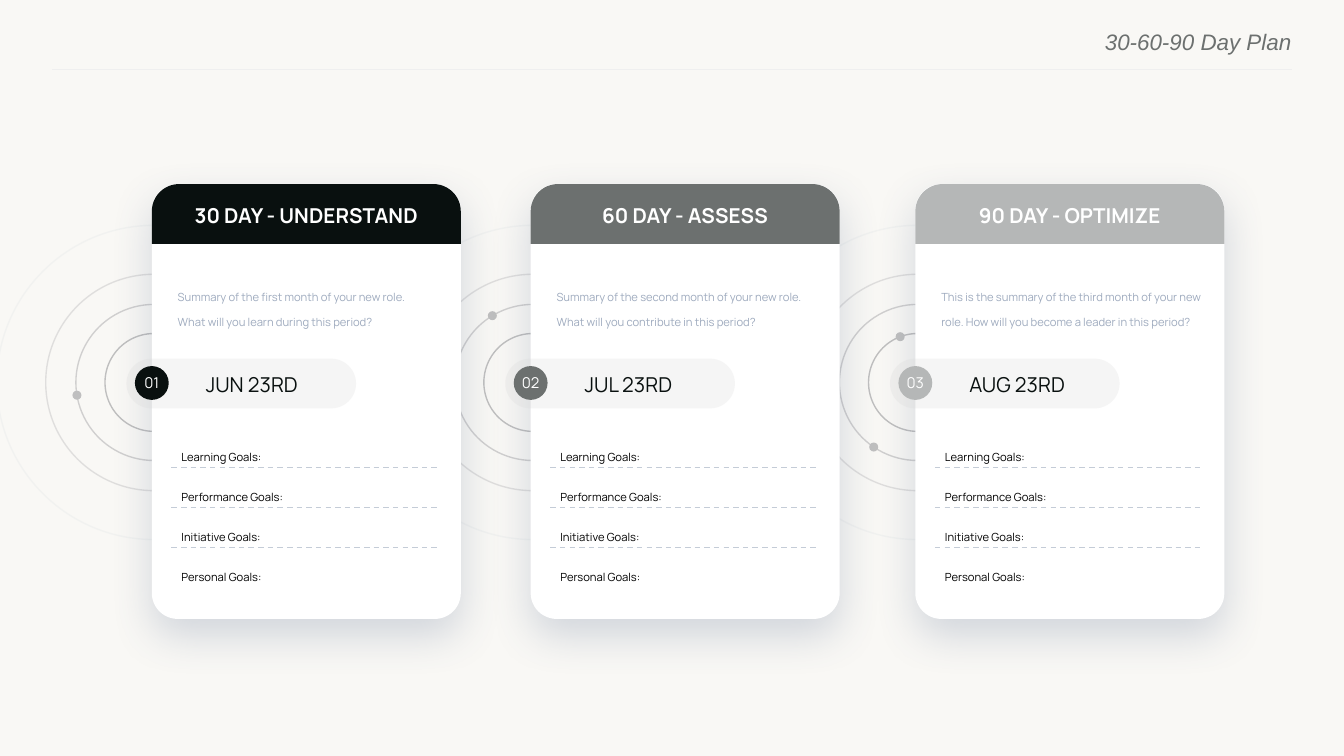
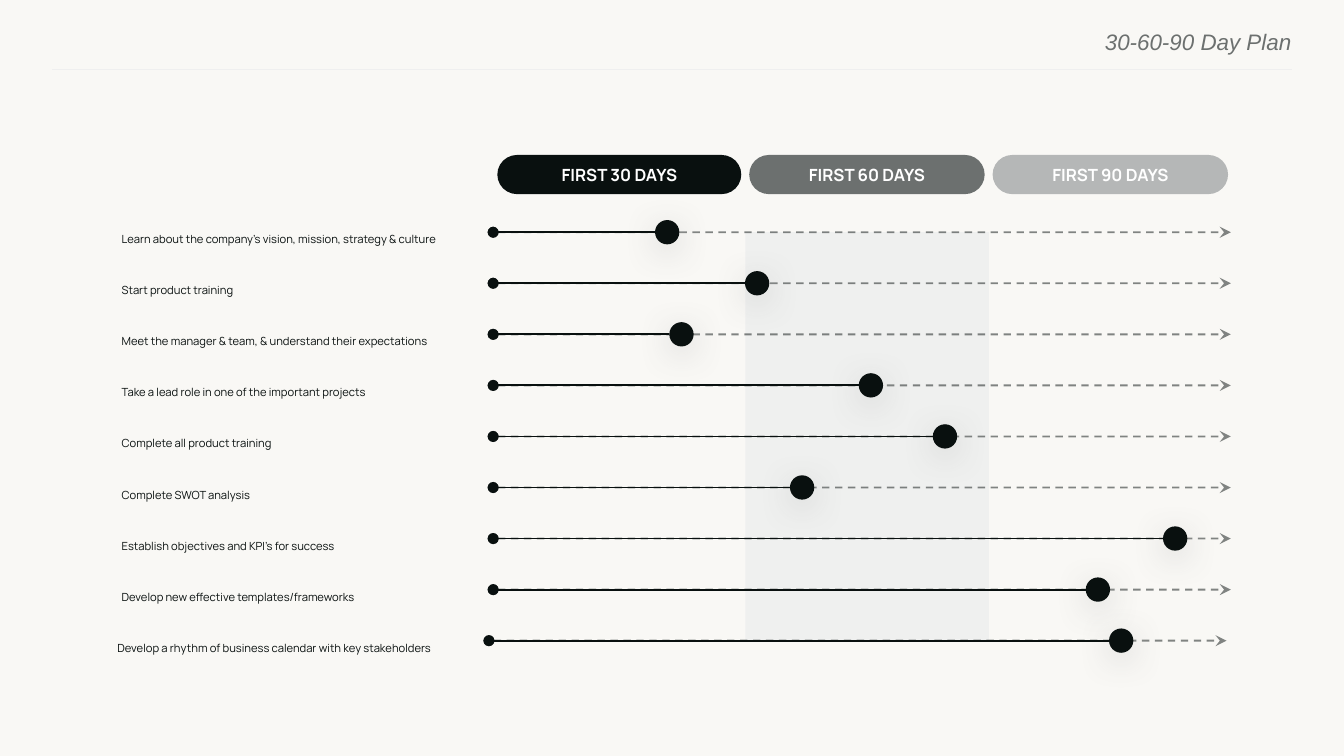
import math

from lxml import etree
from pptx import Presentation
from pptx.dml.color import RGBColor
from pptx.enum import dml, shapes, text
from pptx.oxml.ns import qn
from pptx.util import Cm, Pt

# Colours and fonts
PAPER = RGBColor(0xF9, 0xF8, 0xF5)
RULE = RGBColor(0xEF, 0xEF, 0xEF)
WHITE = RGBColor(0xFF, 0xFF, 0xFF)
BLACK = RGBColor(0x00, 0x00, 0x00)
INK = RGBColor(0x09, 0x10, 0x0F)
SLATE = RGBColor(0x6C, 0x70, 0x6F)
SILVER = RGBColor(0xB5, 0xB7, 0xB7)
RING = RGBColor(0xBF, 0xBF, 0xBF)
OUTER_RING = RGBColor(0xD9, 0xDD, 0xE0)
PILL = RGBColor(0xD8, 0xD8, 0xD8)
MIST = RGBColor(0x9E, 0xAA, 0xBE)
DASH = RGBColor(0xC4, 0xCC, 0xD7)
CARD_SHADOW = RGBColor(0x47, 0x5D, 0x84)
FONT = "Manrope"
TITLE_FONT = "Arial"

# Card slide, in centimetres
CARD_TOP, CARD_WIDTH, CARD_HEIGHT = 3.48, 5.84, 8.22
HEAD_HEIGHT = 1.13
ORBIT_Y, BADGE_Y, BADGE_SIZE = 7.23, 7.24, 0.64
GOAL_TOP, GOAL_STEP = 8.19, 0.755
RINGS = [(1.85, RING, 100), (2.95, RING, 70), (4.09, RING, 44), (5.94, OUTER_RING, 22)]
GOALS = ["Learning Goals:", "Performance Goals:", "Initiative Goals:", "Personal Goals:"]
# left, colour, number, heading, date, summary, summary width, moons (ring, degrees)
CARDS = [
    (2.87, INK, "01", "30 DAY - UNDERSTAND", "JUN 23RD",
     "Summary of the first month of your new role. "
     "What will you learn during this period?", 4.95, [(1, 170.6)]),
    (10.03, SLATE, "02", "60 DAY - ASSESS", "JUL 23RD",
     "Summary of the second month of your new role. "
     "What will you contribute in this period?", 4.95, [(1, 238.8)]),
    (17.3, SILVER, "03", "90 DAY - OPTIMIZE", "AUG 23RD",
     "This is the summary of the third month of your new role. "
     "How will you become a leader in this period?", 5.21, [(0, 249.3), (1, 124.1)]),
]

# Timeline slide, in centimetres
BAND_LEFT, BAND_TOP, BAND_WIDTH, BAND_HEIGHT = 14.09, 4.39, 4.6, 7.72
TRACK_START, TRACK_END, LABEL_LEFT = 9.32, 23.26, 2.12
KNOB_SIZE, LAST_SHIFT = 0.46, 0.08
PHASES = [("FIRST 30 DAYS", INK, 4.61), ("FIRST 60 DAYS", SLATE, 4.45),
          ("FIRST 90 DAYS", SILVER, 4.45)]
# task and where its knob is centred
TASKS = [
    ("Learn about the company’s vision, mission, strategy & culture", 12.61),
    ("Start product training", 14.31),
    ("Meet the manager & team, & understand their expectations", 12.88),
    ("Take a lead role in one of the important projects", 16.46),
    ("Complete all product training", 17.86),
    ("Complete SWOT analysis", 15.16),
    ("Establish objectives and KPI’s for success", 22.21),
    ("Develop new effective templates/frameworks", 20.75),
    ("Develop a rhythm of business calendar with key stakeholders", 21.19),
]


def set_alpha(part, percent):
    """Make the first colour of a shape or line see-through."""
    if percent < 100:
        colour = part._element.spPr.find(".//" + qn("a:srgbClr"))
        etree.SubElement(colour, qn("a:alpha"), val=str(percent * 1000))


def add_shadow(shape, colour, alpha, blur, distance, degrees):
    effects = shape._element.spPr.find(qn("a:effectLst"))
    outer = etree.SubElement(
        effects, qn("a:outerShdw"), blurRad=str(Pt(blur)), dist=str(Pt(distance)),
        dir=str(degrees * 60000), algn="t", rotWithShape="0")
    tint = etree.SubElement(outer, qn("a:srgbClr"), val=str(colour))
    etree.SubElement(tint, qn("a:alpha"), val=str(alpha * 1000))


def write(shape, words, size, colour, bold=False, align=text.PP_ALIGN.LEFT,
          anchor=text.MSO_ANCHOR.TOP, spacing=None, insets=(0.1, 0.1, 0.1, 0.1),
          font=FONT, italic=False):
    frame = shape.text_frame
    frame.word_wrap = True
    frame.auto_size = text.MSO_AUTO_SIZE.NONE
    frame.vertical_anchor = anchor
    (frame.margin_left, frame.margin_top,
     frame.margin_right, frame.margin_bottom) = map(Cm, insets)
    paragraph = frame.paragraphs[0]
    paragraph.alignment = align
    if spacing:
        paragraph.line_spacing = spacing
    run = paragraph.add_run()
    run.text = words
    run.font.name, run.font.size = font, Pt(size)
    run.font.bold, run.font.italic = bold, italic
    run.font.color.rgb = colour


def add_label(slide, left, top, width, height, words, size, colour, **style):
    box = slide.shapes.add_textbox(Cm(left), Cm(top), Cm(width), Cm(height))
    write(box, words, size, colour, **style)


def add_block(slide, kind, left, top, width, height, fill=None, line=None,
              alpha=100, corners=()):
    block = slide.shapes.add_shape(kind, Cm(left), Cm(top), Cm(width), Cm(height))
    block.shadow.inherit = False
    for index, corner in enumerate(corners):
        block.adjustments[index] = corner
    if fill is None:
        block.fill.background()
    else:
        block.fill.solid()
        block.fill.fore_color.rgb = fill
    if line is None:
        block.line.fill.background()
    else:
        block.line.color.rgb = line
        block.line.width = Pt(0.75)
    set_alpha(block, alpha)
    return block


def add_circle(slide, x, y, size, **look):
    return add_block(slide, shapes.MSO_SHAPE.OVAL, x - size / 2, y - size / 2,
                     size, size, **look)


def add_rule(slide, start, end, y, colour, width=0.75, dashed=False, alpha=100,
             head=None, tail=None):
    rule = slide.shapes.add_connector(
        shapes.MSO_CONNECTOR.STRAIGHT, Cm(start), Cm(y), Cm(end), Cm(y))
    rule.line.color.rgb = colour
    rule.line.width = Pt(width)
    if dashed:
        rule.line.dash_style = dml.MSO_LINE.DASH
    set_alpha(rule, alpha)
    outline = rule._element.spPr.find(qn("a:ln"))
    for tag, kind in (("a:headEnd", head), ("a:tailEnd", tail)):
        if kind:
            etree.SubElement(outline, qn(tag), type=kind)
    etree.SubElement(rule._element.spPr, qn("a:effectLst"))


def add_plan_slide(deck):
    """Start a slide with the shared title and header rule."""
    slide = deck.slides.add_slide(deck.slide_layouts[5])
    add_rule(slide, 24.41, 0.99, 1.31, RULE)
    title = slide.shapes.title
    title.left, title.top, title.width, title.height = Cm(12.5), Cm(0.53), Cm(11.91), Cm(0.46)
    write(title, "30-60-90 Day Plan", 12, SLATE, align=text.PP_ALIGN.RIGHT,
          insets=(0, 0, 0, 0), font=TITLE_FONT, italic=True)
    return slide


def add_orbit(slide, card_left, moons):
    center = card_left + 0.04
    for size, colour, alpha in RINGS:
        add_circle(slide, center, ORBIT_Y, size, line=colour, alpha=alpha)
    for ring, degrees in moons:
        radius, angle = RINGS[ring][0] / 2, math.radians(degrees)
        add_circle(slide, center + radius * math.cos(angle),
                   ORBIT_Y + radius * math.sin(angle), 0.17, fill=RING)


def add_card(slide, left, colour, number, heading, date, summary, summary_width):
    panel = add_block(slide, shapes.MSO_SHAPE.ROUNDED_RECTANGLE, left, CARD_TOP,
                      CARD_WIDTH, CARD_HEIGHT, fill=WHITE, corners=[0.084])
    add_shadow(panel, CARD_SHADOW, 22, 23, 8.7, 90)

    # Date pill with numbered badge
    add_block(slide, shapes.MSO_SHAPE.ROUNDED_RECTANGLE, left - 0.48, 6.78, 4.34, 0.94,
              fill=PILL, alpha=25, corners=[0.5])
    badge = add_circle(slide, left, BADGE_Y, BADGE_SIZE, fill=colour)
    write(badge, number, 8, WHITE, align=text.PP_ALIGN.CENTER,
          anchor=text.MSO_ANCHOR.MIDDLE, insets=(0, 0, 0, 0.03))
    add_label(slide, left + 0.84, 6.93, 2.7, BADGE_SIZE, date, 11, INK,
              insets=(0.18, 0.1, 0.18, 0.1))

    # Summary and goals
    add_label(slide, left + 0.39, 5.16, summary_width, 0.99, summary, 6, MIST, spacing=1.88)
    for index, goal in enumerate(GOALS):
        top = GOAL_TOP + index * GOAL_STEP
        add_label(slide, left + 0.46, top, 5, 0.58, goal, 6, BLACK, spacing=1.88)
        if index < len(GOALS) - 1:
            add_rule(slide, left + 0.37, left + 5.43, top + 0.65, DASH, dashed=True)

    header = add_block(slide, shapes.MSO_SHAPE.ROUND_2_SAME_RECTANGLE, left, CARD_TOP,
                       CARD_WIDTH, HEAD_HEIGHT, fill=colour, corners=[0.455, 0])
    write(header, heading, 11, WHITE, bold=True, align=text.PP_ALIGN.CENTER,
          anchor=text.MSO_ANCHOR.MIDDLE, insets=(0.1, 0, 0.1, 0.1))


def add_phases(slide):
    left = 9.4
    for phase, colour, width in PHASES:
        tab = add_block(slide, shapes.MSO_SHAPE.ROUNDED_RECTANGLE, left, 2.93, width, 0.74,
                        fill=colour, corners=[0.5])
        write(tab, phase, 9, WHITE, bold=True, align=text.PP_ALIGN.CENTER,
              anchor=text.MSO_ANCHOR.MIDDLE)
        left += width + 0.15


def add_track(slide, y, task, knob_x, shift):
    add_label(slide, LABEL_LEFT - shift, y - 0.25, 7.19, 0.51, task, 6, INK,
              spacing=1.62, insets=(0.18, 0.1, 0.18, 0.1))
    start = TRACK_START - shift
    add_rule(slide, start, TRACK_END - shift, y, INK, 1, dashed=True, alpha=50,
             head="oval", tail="stealth")
    knob = add_circle(slide, knob_x, y, KNOB_SIZE, fill=INK)
    add_shadow(knob, RING, 61, 18, 4, 91)
    add_rule(slide, start, knob_x - KNOB_SIZE / 2, y, INK, 1, head="oval")


def main():
    deck = Presentation()
    deck.slide_width, deck.slide_height = Cm(25.4), Cm(14.29)
    background = deck.slide_master.background.fill
    background.solid()
    background.fore_color.rgb = PAPER

    # Three cards, with all orbits behind them
    cards_slide = add_plan_slide(deck)
    for left, *_, moons in CARDS:
        add_orbit(cards_slide, left, moons)
    for *card, _ in reversed(CARDS):
        add_card(cards_slide, *card)

    # Timeline of tasks
    timeline = add_plan_slide(deck)
    add_block(timeline, shapes.MSO_SHAPE.RECTANGLE, BAND_LEFT, BAND_TOP, BAND_WIDTH,
              BAND_HEIGHT, fill=MIST, alpha=10)
    add_phases(timeline)
    last = len(TASKS) - 1
    for row, (task, knob_x) in enumerate(TASKS):
        add_track(timeline, BAND_TOP + row * BAND_HEIGHT / last, task, knob_x,
                  LAST_SHIFT if row == last else 0)

    deck.save("out.pptx")


if __name__ == "__main__":
    main()
